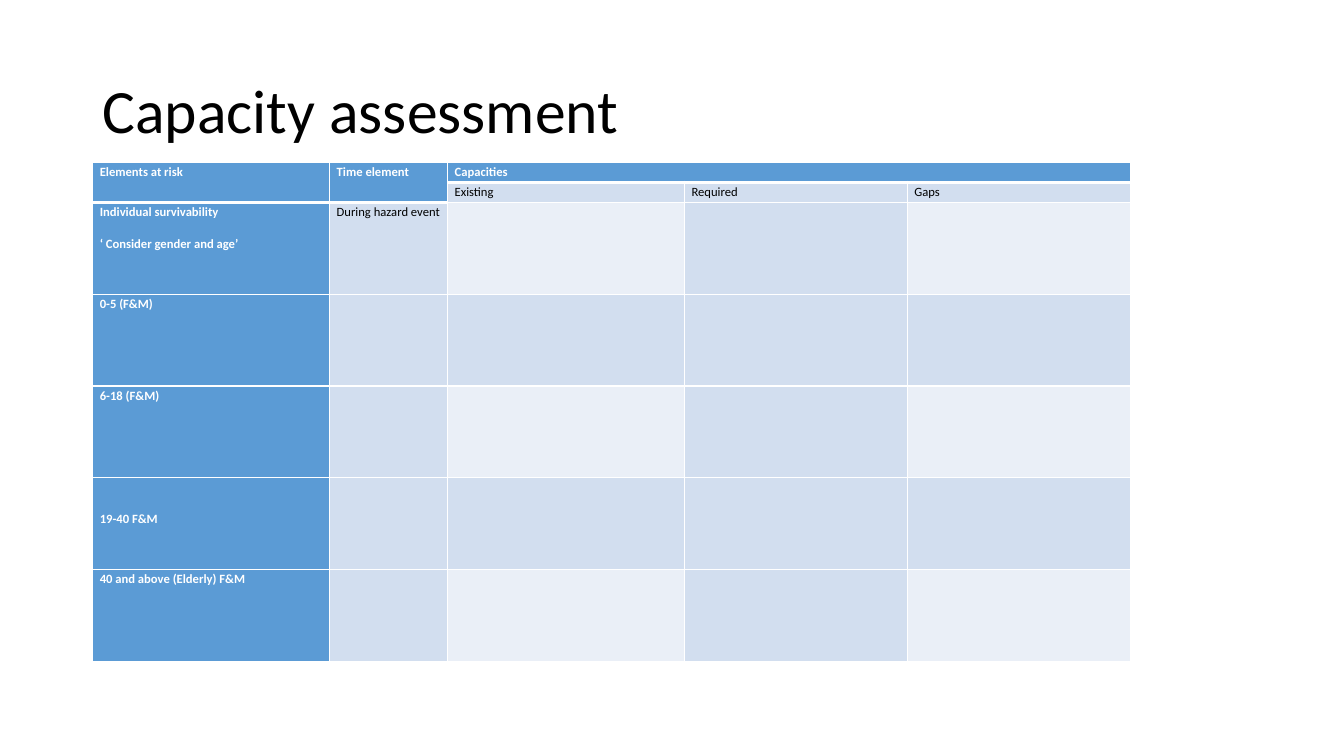
"""Build the capacity assessment slide."""
from lxml import etree
from pptx import Presentation
from pptx.dml.color import RGBColor
from pptx.enum.text import MSO_ANCHOR, PP_ALIGN
from pptx.oxml.ns import qn
from pptx.util import Inches, Pt

MIDDLE = MSO_ANCHOR.MIDDLE
JUSTIFY = PP_ALIGN.JUSTIFY

TITLE = "Capacity assessment"
ROWS = [
    ["Elements at risk", "Time element", "Capacities", "", ""],
    ["", "", "Existing", "Required", "Gaps"],
    ["Individual survivability\n‘ Consider gender and age’", "During hazard event", "", "", ""],
    ["0-5 (F&M)", "", "", "", ""],
    ["6-18 (F&M)", "", "", "", ""],
    ["19-40 F&M", "", "", "", ""],
    ["40 and above (Elderly) F&M", "", "", "", ""],
]
WIDTHS = [2.35, 1.17, 2.35, 2.21, 2.21]
HEIGHTS = [0.2] * 2 + [0.91] * 5
SPANS = [((0, 0), (1, 0)), ((0, 1), (1, 1)), ((0, 2), (0, 4))]
LOWERED = {(5, 0): 0.31}
COLORS = {"blue": "5B9BD5", "light": "D2DEEF", "pale": "EAEFF7",
          "white": "FFFFFF", "black": "000000"}
PARA = {"alignment": JUSTIFY, "line_spacing": 1.15, "space_after": Pt(10)}
FONT = {"name": "Calibri", "size": Pt(9)}
HEAD = {"name": "Calibri", "size": Pt(44)}


def apply(item, form):
    for key, value in form.items():
        setattr(item, key, value)


def paint(font, form, color):
    apply(font, form)
    font.color.rgb = RGBColor.from_string(COLORS[color])


def is_head(row, col):
    return row == 0 or (row == 1 and col < 2)


def pick_fill(row, col):
    if col == 0 or is_head(row, col):
        return "blue"
    return "pale" if row > 1 and row % 2 == 0 and col in (2, 4) else "light"


def add_edges(cell, row, col):
    top = 3 if row > 0 and is_head(row - 1, col) else 1
    base = 3 if is_head(row, col) else 1
    props = cell._tc.get_or_add_tcPr()
    for side, width in {"L": 1, "R": 1, "T": top, "B": base}.items():
        line = etree.SubElement(props, qn("a:ln" + side), w=str(Pt(width)))
        fill = etree.SubElement(line, qn("a:solidFill"))
        etree.SubElement(fill, qn("a:srgbClr"), val=COLORS["white"])


def fill_cell(cell, row, col, text):
    add_edges(cell, row, col)
    shade = pick_fill(row, col)
    cell.fill.solid()
    cell.fill.fore_color.rgb = RGBColor.from_string(COLORS[shade])
    apply(cell, {"margin_left": Inches(0.07), "margin_right": Inches(0.07),
                 "margin_top": Inches(LOWERED.get((row, col), 0)),
                 "margin_bottom": 0})
    bold = shade == "blue"
    cell.text = text
    for para in cell.text_frame.paragraphs:
        apply(para, PARA)
        for run in para.runs:
            paint(run.font, FONT | {"bold": bold}, "white" if bold else "black")
        if not text:
            etree.SubElement(para._p, qn("a:endParaRPr"), sz="900")


def add_title(slide):
    box = slide.shapes.add_textbox(Inches(0.92), Inches(0.4), Inches(11.5), Inches(1.45))
    frame = box.text_frame
    apply(frame, {"word_wrap": True, "vertical_anchor": MIDDLE})
    para = frame.paragraphs[0]
    para.line_spacing = 0.9
    run = para.add_run()
    run.text = TITLE
    paint(run.font, HEAD, "black")


def add_grid(slide):
    grid = slide.shapes.add_table(
        len(ROWS), len(WIDTHS), Inches(0.92), Inches(1.61),
        Inches(sum(WIDTHS)), Inches(sum(HEIGHTS))).table
    for col, width in zip(grid.columns, WIDTHS):
        col.width = Inches(width)
    for row, height in zip(grid.rows, HEIGHTS):
        row.height = Inches(height)
    for r, texts in enumerate(ROWS):
        for c, text in enumerate(texts):
            fill_cell(grid.cell(r, c), r, c, text)
    for first, last in SPANS:
        grid.cell(*first).merge(grid.cell(*last))


def main():
    deck = Presentation()
    apply(deck, {"slide_width": Inches(13.33), "slide_height": Inches(7.5)})
    slide = deck.slides.add_slide(deck.slide_layouts[6])
    add_title(slide)
    add_grid(slide)
    deck.save("out.pptx")


if __name__ == "__main__":
    main()
